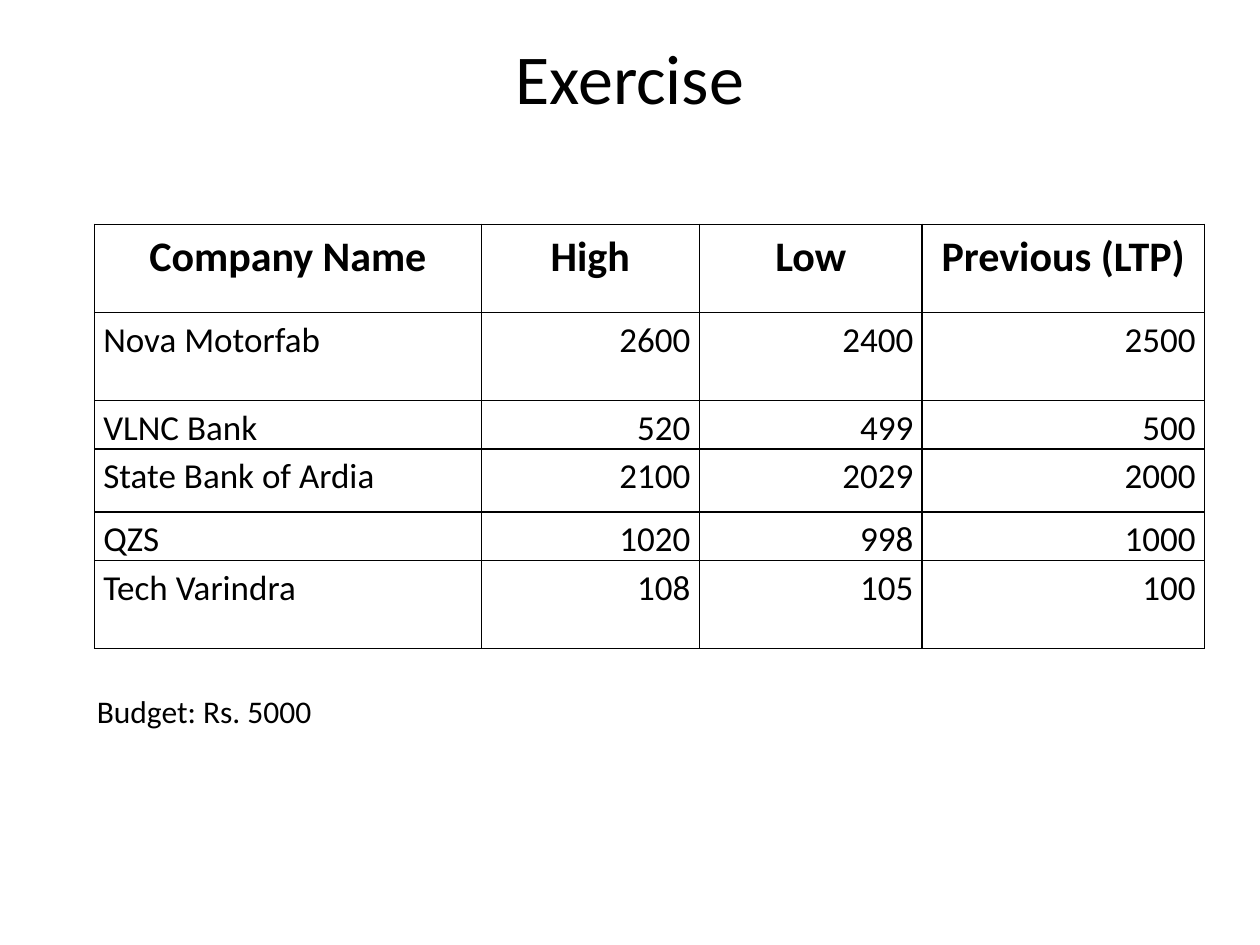
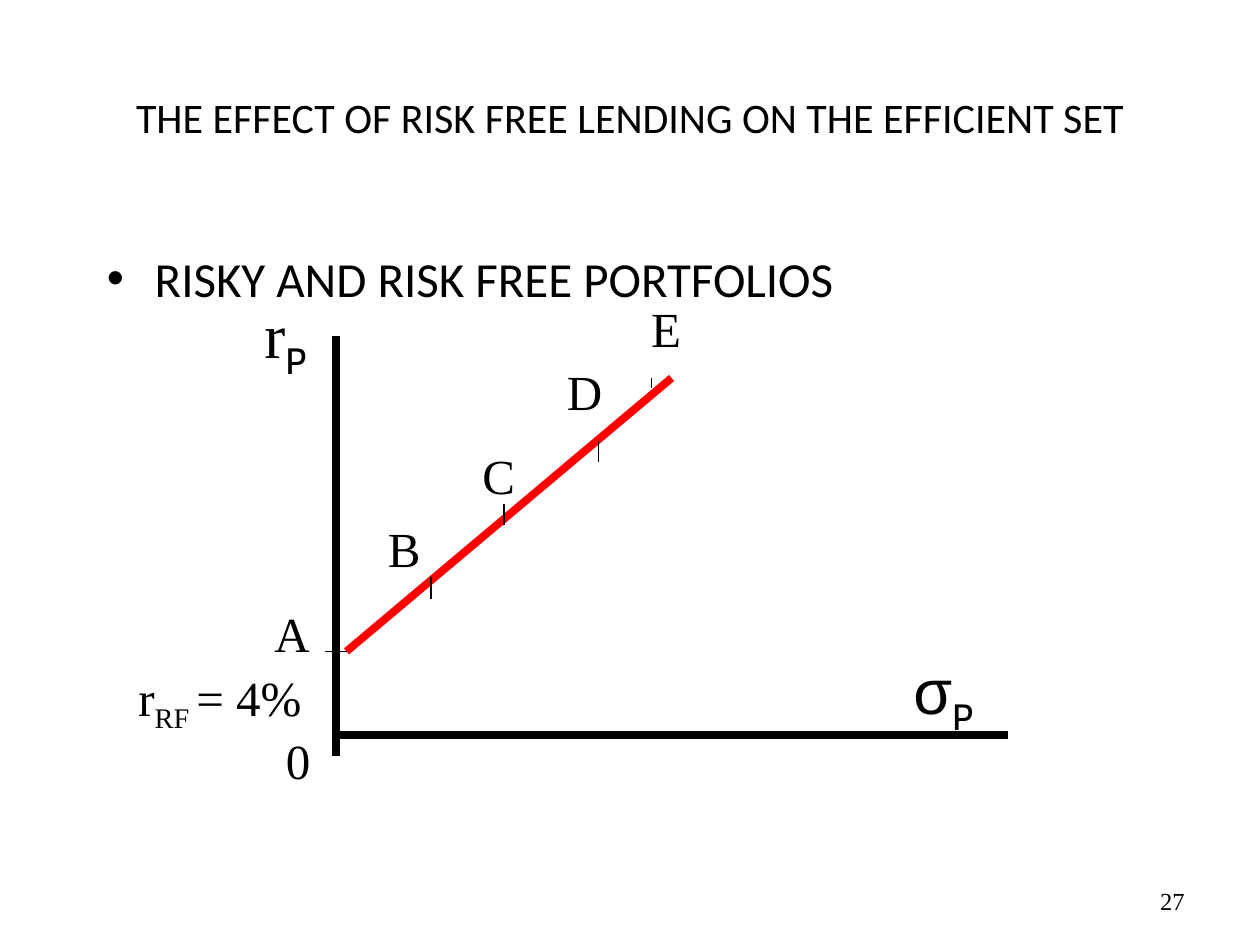
from lxml.etree import SubElement
from pptx import Presentation
from pptx.dml.color import RGBColor
from pptx.enum.shapes import MSO_CONNECTOR as Connector
from pptx.enum.text import MSO_ANCHOR as Anchor, PP_ALIGN as Align
from pptx.oxml import parse_xml
from pptx.oxml.ns import nsdecls, qn
from pptx.util import Inches, Pt

# Shared look
BLACK, RED = "000000", "FF0000"
SANS, SERIF, GREEK, SUB = "Calibri", "Times New Roman", "Arial", "Cabin"
BLANK_LAYOUT = 6

# Share table
HEADINGS = ["Company Name", "High", "Low", "Previous (LTP)"]
SHARES = [
    ["Nova Motorfab", 2600, 2400, 2500],
    ["VLNC Bank", 520, 499, 500],
    ["State Bank of Ardia", 2100, 2029, 2000],
    ["QZS", 1020, 998, 1000],
    ["Tech Varindra", 108, 105, 100],
]
COLUMN_WIDTHS = [3.07, 1.73, 1.77, 2.24]
ROW_HEIGHTS = [0.7, 0.7, 0.36, 0.5, 0.36, 0.7]

# Diagram: start, end, colour, points
AXES = [((2.67, 2.67), (2.67, 6)), ((2.67, 5.83), (8, 5.83))]
PORTFOLIO_LINE = ((2.75, 5.17), (5.33, 3))
TICKS = [
    ((3.42, 4.58), (3.42, 4.75)),
    ((4, 4), (4, 4.17)),
    ((4.75, 3.5), (4.75, 3.67)),
    ((5.17, 3), (5.17, 3.08)),
    ((2.58, 5.17), (2.75, 5.17)),
]
POINT_LABELS = [
    ("A", 2.08, 4.74, 0.72),
    ("B", 2.98, 4.07, 0.46),
    ("C", 3.73, 3.49, 0.46),
    ("D", 4.4, 2.82, 0.48),
    ("E", 5.07, 2.32, 0.44),
    ("0", 2.17, 5.75, 0.4),
]


def colour(code):
    return RGBColor.from_string(code)


def apply_format(target, values):
    for name, value in values.items():
        setattr(target, name, value)


def add_span(para, text, size, face=SANS, bold=False, subscript=False):
    span = para.add_run()
    span.text = text
    apply_format(span.font, {"size": Pt(size), "name": face, "bold": bold})
    span.font.color.rgb = colour(BLACK)
    if subscript:
        span.font._element.set("baseline", "-25000")


def add_text(page, place, spans, align=Align.LEFT, anchor=Anchor.TOP, wrap=True):
    """Add a one-paragraph box; each span is a dict of add_span arguments."""
    box = page.shapes.add_textbox(*map(Inches, place))
    apply_format(box.text_frame, {"word_wrap": wrap, "vertical_anchor": anchor})
    para = box.text_frame.paragraphs[0]
    para.alignment = align
    for span in spans:
        add_span(para, **span)
    return para


def add_title(page, text, size, height):
    add_text(page, (0.5, 0.3, 9, height), [dict(text=text, size=size)],
             Align.CENTER, Anchor.MIDDLE)


def add_bullet(para, indent):
    properties = para._p.get_or_add_pPr()
    properties.set("marL", str(Inches(indent)))
    properties.set("indent", str(-Inches(indent)))
    SubElement(properties, qn("a:buFont")).set("typeface", GREEK)
    SubElement(properties, qn("a:buChar")).set("char", "•")


def add_line(page, start, end, code=BLACK, width=0.75):
    line = page.shapes.add_connector(Connector.STRAIGHT, *map(Inches, start + end))
    line.line.color.rgb = colour(code)
    line.line.width = Pt(width)
    SubElement(line._element.spPr, qn("a:effectLst"))


def add_borders(cell):
    properties = cell._tc.get_or_add_tcPr()
    for index, side in enumerate(("lnL", "lnR", "lnT", "lnB")):
        properties.insert(index, parse_xml(
            f'<a:{side} {nsdecls("a")} w="{Pt(1)}"><a:solidFill>'
            f'<a:srgbClr val="{BLACK}"/></a:solidFill></a:{side}>'))


def fill_cell(cell, text, size, align, bold):
    cell.fill.background()
    add_borders(cell)
    apply_format(cell, {
        "margin_left": Inches(0.07), "margin_right": Inches(0.07),
        "margin_top": 0, "margin_bottom": 0, "vertical_anchor": Anchor.TOP})
    para = cell.text_frame.paragraphs[0]
    apply_format(para, {"alignment": align, "line_spacing": 1.15})
    add_span(para, text, size, bold=bold)


def add_share_table(page):
    rows = [HEADINGS] + SHARES
    place = map(Inches, (0.75, 1.78, sum(COLUMN_WIDTHS), sum(ROW_HEIGHTS)))
    table = page.shapes.add_table(len(rows), len(HEADINGS), *place).table
    apply_format(table, {"first_row": False, "horz_banding": False})
    for column, width in zip(table.columns, COLUMN_WIDTHS):
        column.width = Inches(width)
    for row, height in zip(table.rows, ROW_HEIGHTS):
        row.height = Inches(height)
    for r, values in enumerate(rows):
        for c, value in enumerate(values):
            heading = r == 0
            align = Align.CENTER if heading else Align.RIGHT if c else Align.LEFT
            fill_cell(table.cell(r, c), str(value), 24 if heading else 20,
                      align, heading)


def build_exercise(page):
    add_title(page, "Exercise", 40, 0.61)
    add_share_table(page)
    add_text(page, (0.67, 5.44, 3.62, 0.4), [dict(text="Budget: Rs. 5000", size=18)])


def build_efficient_set(page):
    add_title(page, "THE EFFECT OF RISK FREE LENDING ON THE EFFICIENT SET", 24, 1.25)
    heading = add_text(page, (0.75, 1.92, 8.5, 4.5),
                       [dict(text="RISKY AND RISK FREE PORTFOLIOS", size=28)])
    add_bullet(heading, 0.38)
    add_text(page, (7.17, 6.95, 2.33, 0.4), [dict(text="27", size=14, face=SERIF)],
             Align.RIGHT, Anchor.MIDDLE)

    # Axes, portfolio line and ticks
    for start, end in AXES:
        add_line(page, start, end, width=4.5)
    add_line(page, *PORTFOLIO_LINE, RED, 4.5)
    for start, end in TICKS:
        add_line(page, start, end)

    # Point and axis labels
    for text, left, top, width in POINT_LABELS:
        add_text(page, (left, top, width, 0.57),
                 [dict(text=text, size=28, face=SERIF)])
    add_text(page, (1, 5.25, 1.56, 0.57), [
        dict(text="r", size=28, face=SERIF),
        dict(text="RF ", size=28, face=SERIF, subscript=True),
        dict(text="= 4%", size=28, face=SERIF)], wrap=False)
    for symbol, face, place in (("σ", GREEK, (7.15, 5.12, 1.1, 0.7)),
                                ("r", SERIF, (2, 2.3, 0.78, 0.7))):
        add_text(page, place, [
            dict(text=symbol, size=36, face=face),
            dict(text="P", size=36, face=SUB, subscript=True)])


def main():
    deck = Presentation()
    deck.slide_width, deck.slide_height = Inches(10), Inches(7.5)
    for build in (build_exercise, build_efficient_set):
        build(deck.slides.add_slide(deck.slide_layouts[BLANK_LAYOUT]))
    deck.save("out.pptx")


if __name__ == "__main__":
    main()
